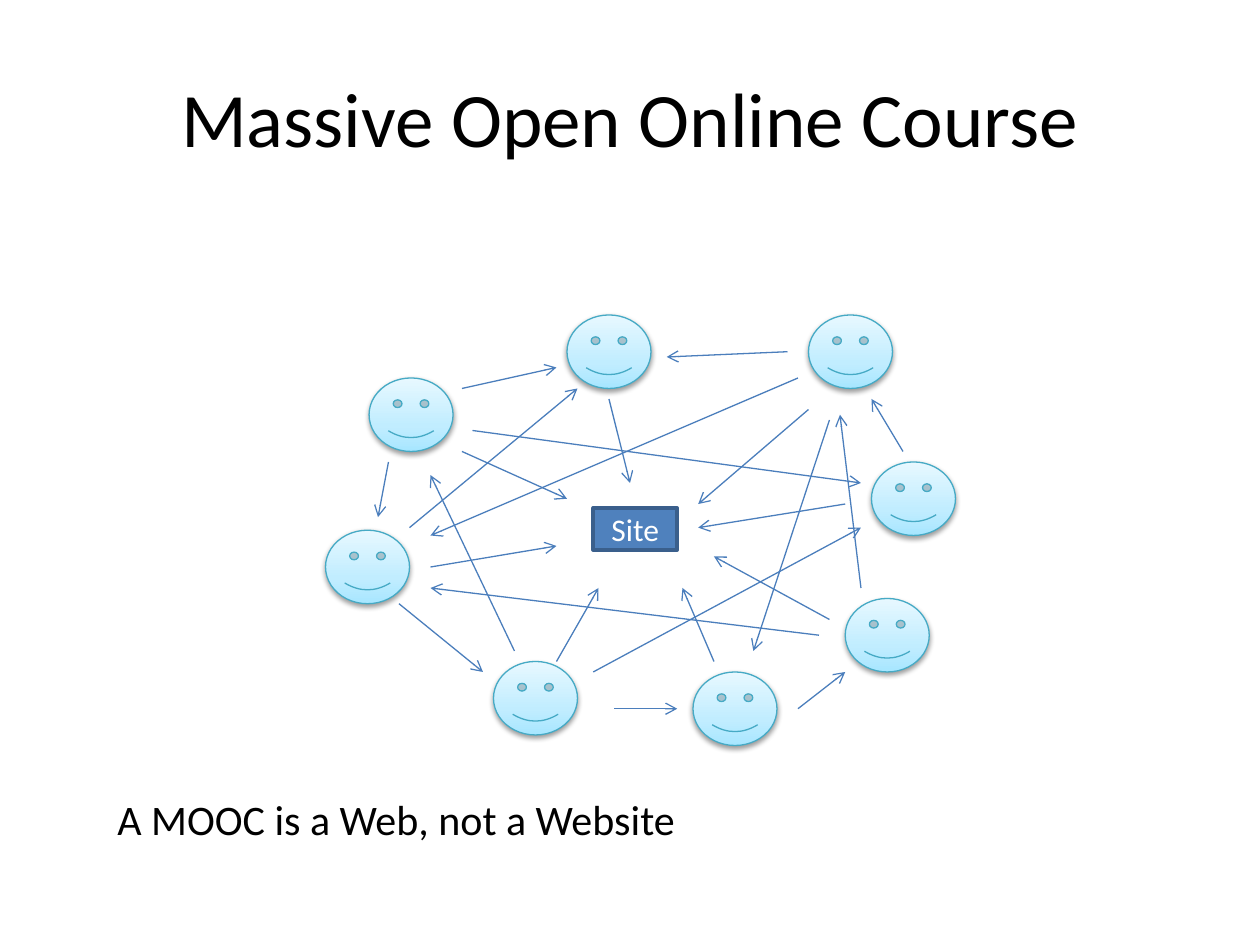
from lxml.etree import SubElement
from pptx import Presentation
from pptx.dml.color import RGBColor
from pptx.enum.shapes import MSO_CONNECTOR, MSO_SHAPE
from pptx.enum.text import MSO_ANCHOR, MSO_AUTO_SIZE, PP_ALIGN
from pptx.oxml import parse_xml
from pptx.oxml.ns import nsdecls, qn
from pptx.util import Inches, Pt

BLACK = RGBColor(0x00, 0x00, 0x00)
WHITE = RGBColor(0xFF, 0xFF, 0xFF)
BLUE = RGBColor(0x4F, 0x81, 0xBD)
NAVY = RGBColor(0x3A, 0x5F, 0x8C)
TEAL = RGBColor(0x46, 0xAA, 0xC5)
ARROW = RGBColor(0x4B, 0x7E, 0xBC)
SKY = ((0, RGBColor(0xA7, 0xE6, 0xFF)),
       (35, RGBColor(0xC1, 0xED, 0xFF)),
       (100, RGBColor(0xE7, 0xF8, 0xFF)))
FONT = "Calibri"

COLS, ROWS = 126, 84
FACE = (16, 14)
SITE = (53, 36.75, 16, 8)
FACES = ((106, 28), (101, 54), (94, 0), (72, 68),
         (34, 66), (2, 41), (10.3, 12), (48, 0))
TO_SITE = ((94, 18, 73, 36), (101, 36, 73, 40.5), (98, 58, 76, 46),
           (76, 66, 70, 52), (56, 16, 60, 32), (28, 26, 48, 35),
           (22, 48, 46, 44), (46, 66, 54, 52))
AMONG = ((30, 22, 104, 32), (92, 12, 22, 42), (28, 14, 46, 10),
         (98, 20, 83.5, 64), (53, 68, 104, 40.5), (18, 40.5, 50, 14),
         (104, 52, 100, 19), (112, 26, 106, 16), (90, 7, 67, 8),
         (14, 28, 12, 38.5), (38, 64, 22, 30.5), (57, 75, 69, 75),
         (96, 61, 22, 52), (16, 55, 32, 68), (92, 75, 101, 68))


def write(frame, text, size, color, align):
    """Fill a text frame with one styled line."""
    frame.text = text
    frame.word_wrap = True
    line = frame.paragraphs[0]
    line.alignment = align
    font = line.runs[0].font
    font.name, font.size, font.color.rgb = FONT, Pt(size), color


def add_title(slide, box):
    """Place and style the title placeholder."""
    title = slide.shapes.title
    title.left, title.top, title.width, title.height = box
    write(title.text_frame, "Massive Open Online Course", 44, BLACK, PP_ALIGN.CENTER)
    title.text_frame.vertical_anchor = MSO_ANCHOR.MIDDLE


def add_note(slide, box):
    """Add the closing line of text."""
    frame = slide.shapes.add_textbox(*box).text_frame
    write(frame, "A MOOC is a Web, not a Website", 24, BLACK, PP_ALIGN.LEFT)
    frame.auto_size = MSO_AUTO_SIZE.SHAPE_TO_FIT_TEXT


def add_site(slide, box):
    """Add the site block at the hub."""
    site = slide.shapes.add_shape(MSO_SHAPE.RECTANGLE, *box)
    site.shadow.inherit = False
    site.fill.solid()
    site.fill.fore_color.rgb = BLUE
    site.line.color.rgb = NAVY
    site.line.width = Pt(2)
    write(site.text_frame, "Site", 18, WHITE, PP_ALIGN.CENTER)
    site.text_frame.vertical_anchor = MSO_ANCHOR.MIDDLE


def add_face(slide, box):
    """Add one learner with a sky gradient and a soft shadow."""
    face = slide.shapes.add_shape(MSO_SHAPE.SMILEY_FACE, *box)
    stops = "".join(
        f'<a:gs pos="{pos * 1000}"><a:srgbClr val="{color}"/></a:gs>'
        for pos, color in SKY)
    face.element.spPr.insert(2, parse_xml(
        f'<a:gradFill {nsdecls("a")} rotWithShape="1"><a:gsLst>{stops}</a:gsLst>'
        '<a:lin ang="16200000" scaled="0"/></a:gradFill>'))
    face.line.color.rgb = TEAL
    face.line.width = Pt(0.75)
    face.shadow.inherit = False
    face.element.spPr.find(qn("a:effectLst")).append(parse_xml(
        f'<a:outerShdw {nsdecls("a")} blurRad="{Pt(3.1)}" dist="{Pt(1.6)}" '
        'dir="5400000" rotWithShape="0"><a:srgbClr val="000000">'
        '<a:alpha val="38000"/></a:srgbClr></a:outerShdw>'))


def add_arrow(slide, ends):
    """Add a thin arrow from the first point to the second."""
    arrow = slide.shapes.add_connector(MSO_CONNECTOR.STRAIGHT, *ends)
    arrow.line.color.rgb = ARROW
    arrow.line.width = Pt(0.75)
    spot = arrow.element.spPr
    SubElement(spot.find(qn("a:ln")), qn("a:tailEnd"), type="arrow")
    SubElement(spot, qn("a:effectLst"))


def add_web(slide, box):
    """Draw the site, the learners and their links on a grid in the box."""
    left, top, width, height = box
    col, row = width / COLS, height / ROWS

    def point(x, y):
        """Turn a grid cell into a slide position."""
        return round(left + x * col), round(top + y * row)

    def area(x, y, wide, high):
        """Turn a block of cells into a slide box."""
        return *point(x, y), round(wide * col), round(high * row)

    add_site(slide, area(*SITE))
    for spot in FACES:
        add_face(slide, area(*spot, *FACE))
    for ends in TO_SITE + AMONG:
        add_arrow(slide, point(*ends[:2]) + point(*ends[2:]))


def main():
    """Build and save the slide."""
    deck = Presentation()
    deck.slide_width, deck.slide_height = Inches(10), Inches(7.5)
    wide, high = deck.slide_width, deck.slide_height

    def share(x, y, w, h):
        """Turn shares of the slide into a box."""
        return round(x * wide), round(y * high), round(w * wide), round(h * high)

    slide = deck.slides.add_slide(deck.slide_layouts[5])
    add_title(slide, share(0.05, 0.04, 0.9, 1 / 6))
    add_web(slide, share(1 / 4, 1 / 3, 0.525, 7 / 15))
    add_note(slide, share(1 / 12, 5 / 6, 3 / 4, 1 / 15))
    deck.save("out.pptx")


if __name__ == "__main__":
    main()
